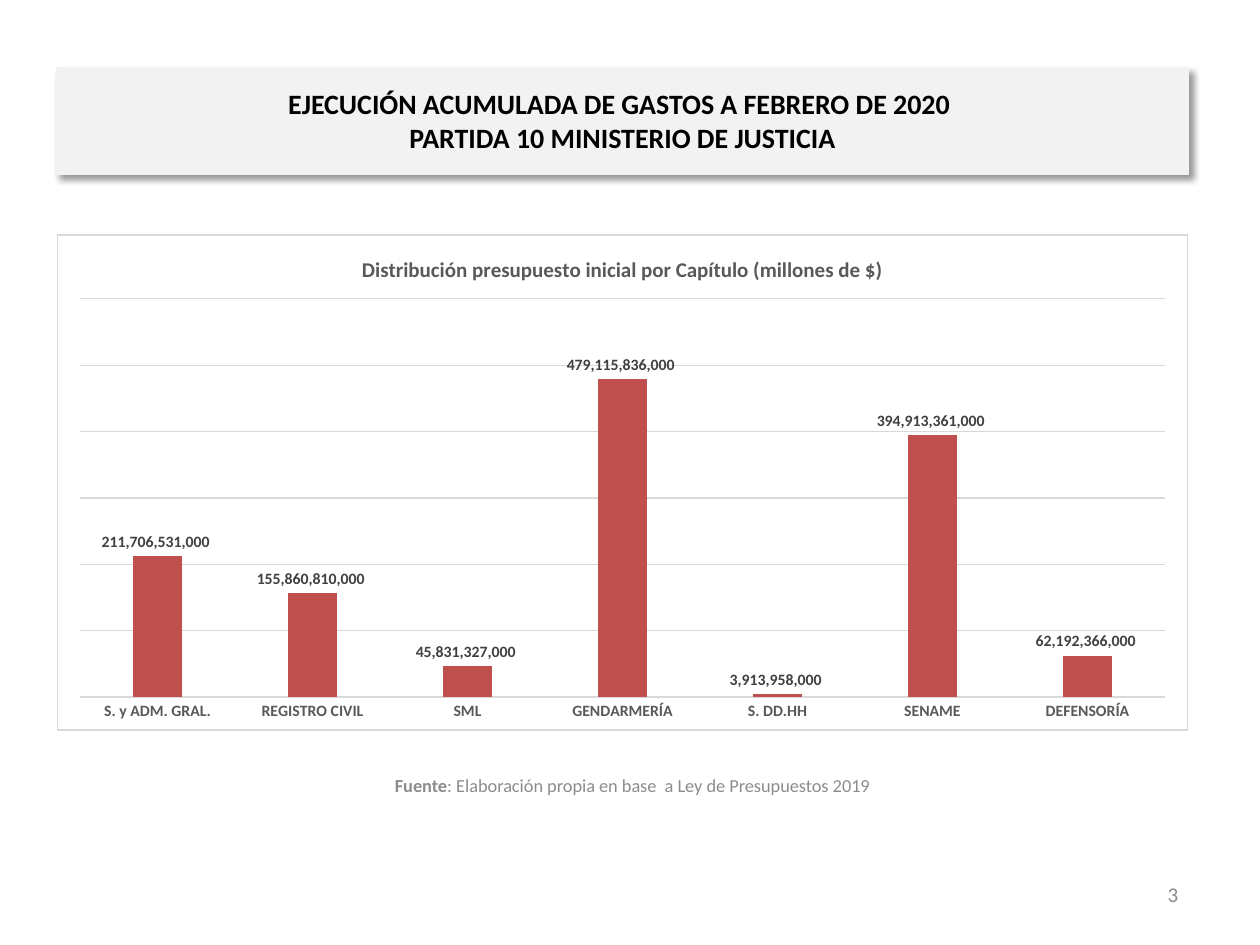
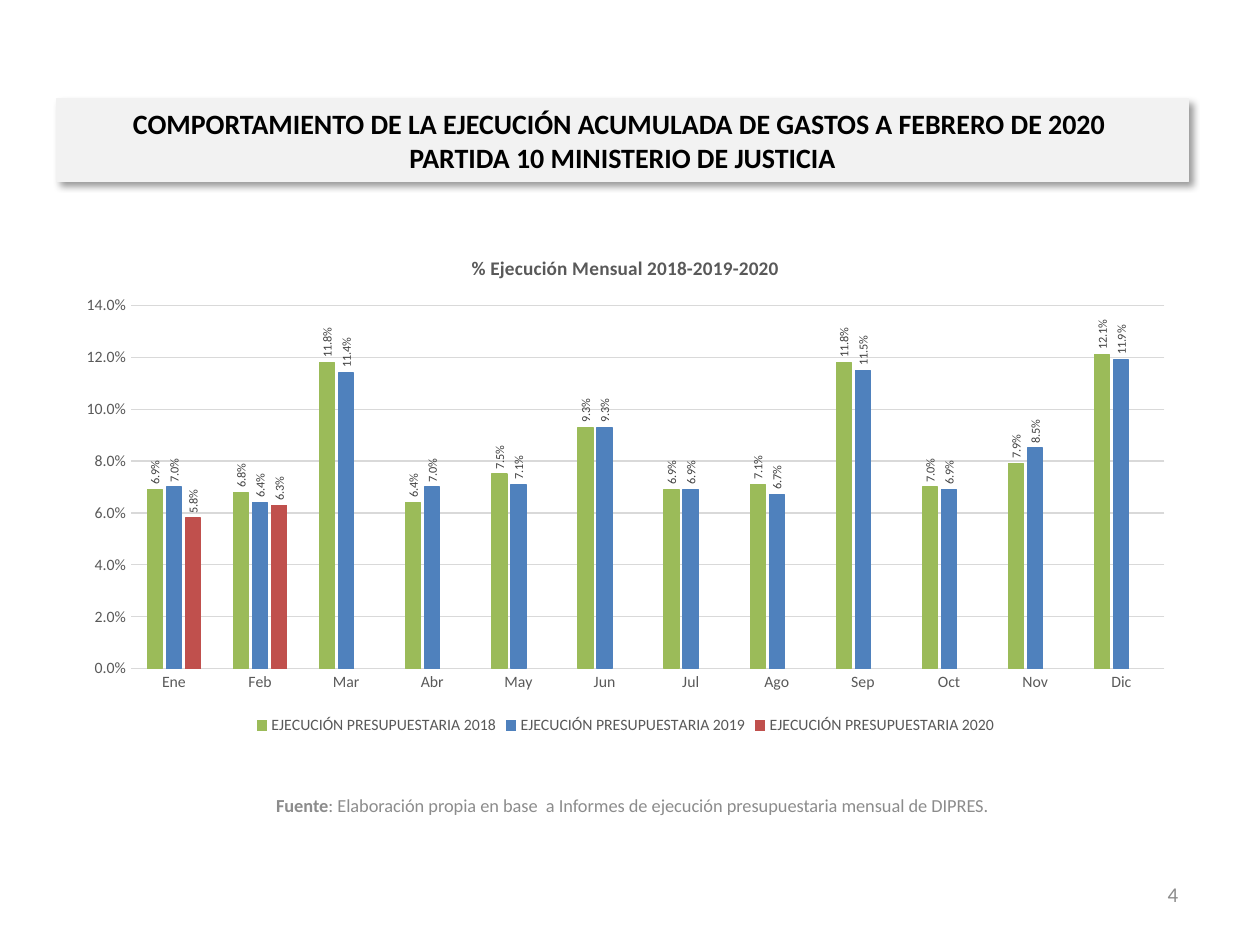
import pptx
import pptx.chart.data
import pptx.dml.color
import pptx.enum.chart
import pptx.enum.shapes
import pptx.enum.text
import pptx.oxml.ns
import pptx.util
from dataclasses import dataclass
from lxml import etree

Pt = pptx.util.Pt
qn = pptx.oxml.ns.qn
Align = pptx.enum.text.PP_ALIGN
Enum = pptx.enum.chart


# Shared colours and type sizes
@dataclass(frozen=True)
class Theme:
    font: str = "Calibri"
    black: str = "000000"
    white: str = "FFFFFF"
    band: str = "F2F2F2"
    note: str = "8C8C8C"
    dark: str = "595959"
    label: str = "404040"
    grid: str = "D9D9D9"
    red: str = "C0504D"
    blue: str = "4F81BD"
    green: str = "9BBB59"
    head: float = 16
    page: float = 12
    source: float = 10.5
    base: float = 10
    axis: float = 9
    line: float = 0.75


def color(code):
    return pptx.dml.color.RGBColor.from_string(code)


class Deck:
    def __init__(self, theme):
        self.theme = theme
        self.file = pptx.Presentation()
        self.file.slide_width, self.file.slide_height = Pt(720), Pt(540)
        self.slide = None

    def font(self, font, size, code, bold=False):
        font.name, font.size, font.bold = self.theme.font, Pt(size), bold
        font.color.rgb = color(code)

    def stroke(self, line, code):
        line.color.rgb = color(code)
        line.width = Pt(self.theme.line)

    def run(self, para, text, size, code, bold=False):
        run = para.add_run()
        run.text = text
        self.font(run.font, size, code, bold)

    def start(self, page):
        self.slide = self.file.slides.add_slide(self.file.slide_layouts[6])
        para = self.text(512.6, 496.8, 167.8, Align.RIGHT)
        self.run(para, str(page), self.theme.page, self.theme.note)

    def text(self, left, top, width, align):
        box = self.slide.shapes.add_textbox(Pt(left), Pt(top), Pt(width), Pt(28.8))
        frame = box.text_frame
        frame.word_wrap = True
        frame.vertical_anchor = pptx.enum.text.MSO_ANCHOR.MIDDLE
        frame.paragraphs[0].alignment = align
        return frame.paragraphs[0]

    def source(self, top, text):
        para = self.text(30.6, top, 661.7, Align.CENTER)
        self.run(para, "Fuente", self.theme.source, self.theme.note, True)
        self.run(para, ": " + text, self.theme.source, self.theme.note)

    def banner(self, top, height, first):
        look = self.theme
        band = self.slide.shapes.add_shape(
            pptx.enum.shapes.MSO_SHAPE.RECTANGLE,
            Pt(32.4), Pt(top), Pt(646.6), Pt(height))
        band.fill.solid()
        band.fill.fore_color.rgb = color(look.band)
        self.stroke(band.line, look.band)
        band.shadow.inherit = False
        # Soft shadow to the lower right
        cast = etree.SubElement(
            band.element.spPr.find(qn("a:effectLst")), qn("a:outerShdw"),
            blurRad=str(Pt(4)), dist=str(Pt(3)), dir=str(45 * 60000),
            algn="tl", rotWithShape="0")
        tint = etree.SubElement(cast, qn("a:srgbClr"), val=look.black)
        etree.SubElement(tint, qn("a:alpha"), val="40000")
        frame = band.text_frame
        frame.word_wrap = True
        frame.vertical_anchor = pptx.enum.text.MSO_ANCHOR.MIDDLE
        para = frame.paragraphs[0]
        para.alignment = Align.CENTER
        self.run(para, first + " ", look.head, look.black, True)
        para.add_line_break()
        self.run(para, "PARTIDA 10 MINISTERIO DE JUSTICIA",
                 look.head, look.black, True)

    def chart(self, area, title, size, names, rows, form, top, step, bold=False):
        """Draw columns; rows holds (name, values, colour)."""
        look = self.theme
        data = pptx.chart.data.CategoryChartData(number_format=form)
        data.categories = names
        for name, vals, _ in rows:
            data.add_series(name, vals)
        chart = self.slide.shapes.add_chart(
            Enum.XL_CHART_TYPE.COLUMN_CLUSTERED, *map(Pt, area), data).chart
        self.font(chart.font, look.base, look.black)
        chart.has_legend = False
        chart.has_title = True
        self.run(chart.chart_title.text_frame.paragraphs[0],
                 title, size, look.dark, True)
        chart.chart_title.include_in_layout = False

        # Axes
        for axis in (chart.category_axis, chart.value_axis):
            axis.major_tick_mark = Enum.XL_TICK_MARK.NONE
            axis.minor_tick_mark = Enum.XL_TICK_MARK.NONE
            self.font(axis.tick_labels.font, look.axis, look.dark, bold)
        self.stroke(chart.category_axis.format.line, look.grid)
        scale = chart.value_axis
        scale.minimum_scale, scale.maximum_scale = 0, top
        scale.major_unit = step
        scale.format.line.fill.background()
        scale.tick_labels.number_format = form
        scale.tick_labels.number_format_is_linked = False
        scale.has_major_gridlines = True
        self.stroke(scale.major_gridlines.format.line, look.grid)

        # Columns
        plot = chart.plots[0]
        plot.gap_width, plot.overlap = 219, -27
        plot.vary_by_categories = False
        for item, row in zip(plot.series, rows):
            item.invert_if_negative = False
            item.format.fill.solid()
            item.format.fill.fore_color.rgb = color(row[2])
        return chart

    def labels(self, chart, size, form, bold=False, turn=0):
        for item in chart.plots[0].series:
            marks = item.data_labels
            marks.show_value = True
            marks.position = Enum.XL_LABEL_POSITION.OUTSIDE_END
            marks.number_format = form
            marks.number_format_is_linked = False
            self.font(marks.font, size, self.theme.label, bold)
        if turn:
            for node in chart.element.iter(qn("c:dLbls")):
                body = node.find(qn("c:txPr")).find(qn("a:bodyPr"))
                body.set("rot", str(turn * 60000))
                body.set("vert", "horz")

    def legend(self, chart):
        chart.has_legend = True
        chart.legend.position = Enum.XL_LEGEND_POSITION.BOTTOM
        chart.legend.include_in_layout = False
        self.font(chart.legend.font, self.theme.axis, self.theme.dark)

    def frame(self, chart):
        look = self.theme
        props = etree.Element(qn("c:spPr"))
        line = etree.Element(qn("a:ln"), w=str(Pt(look.line)))
        for home, code in ((props, look.white), (line, look.grid)):
            fill = etree.SubElement(home, qn("a:solidFill"))
            etree.SubElement(fill, qn("a:srgbClr"), val=code)
        props.append(line)
        chart.element.find(qn("c:chart")).addnext(props)


def budget(deck):
    look = deck.theme
    deck.start(3)
    deck.banner(38.4, 61, "EJECUCIÓN ACUMULADA DE GASTOS A FEBRERO DE 2020")
    deck.source(434.2, "Elaboración propia en base  a Ley de Presupuestos 2019")
    names = ["S. y ADM. GRAL.", "REGISTRO CIVIL", "SML", "GENDARMERÍA",
             "S. DD.HH", "SENAME", "DEFENSORÍA"]
    vals = [211706531000, 155860810000, 45831327000, 479115836000,
            3913958000, 394913361000, 62192366000]
    form = "#,##0_ ;[Red]\\-#,##0\\ "
    chart = deck.chart(
        (32.4, 133.9, 646.6, 283.7),
        "Distribución presupuesto inicial por Capítulo (millones de $)", 12,
        names, [("Series 1", vals, look.red)], form, 600e9, 100e9, bold=True)
    chart.value_axis.visible = False
    deck.labels(chart, look.axis, form, bold=True)
    deck.frame(chart)


def monthly(deck):
    look = deck.theme
    deck.start(4)
    deck.banner(56.6, 47.2,
                "COMPORTAMIENTO DE LA EJECUCIÓN ACUMULADA DE GASTOS A FEBRERO DE 2020")
    deck.source(445.7, "Elaboración propia en base  a Informes de ejecución "
                       "presupuestaria mensual de DIPRES.")
    names = "Ene Feb Mar Abr May Jun Jul Ago Sep Oct Nov Dic".split()
    years = [
        (2018, look.green, [0.069, 0.068, 0.118, 0.064, 0.075, 0.093,
                            0.069, 0.071, 0.118, 0.07, 0.079, 0.121]),
        (2019, look.blue, [0.07, 0.064, 0.114, 0.07, 0.071, 0.093,
                           0.069, 0.067, 0.115, 0.069, 0.085, 0.119]),
        (2020, look.red, [0.058, 0.063] + [None] * 10),
    ]
    rows = [(f"EJECUCIÓN PRESUPUESTARIA {year}", vals, code)
            for year, code, vals in years]
    chart = deck.chart((36.7, 133.9, 641.5, 288.7),
                       "% Ejecución Mensual 2018-2019-2020", 11,
                       names, rows, "0.0%", 0.14, 0.02)
    for item, row in zip(chart.plots[0].series, rows):
        deck.stroke(item.format.line, row[2])
    deck.labels(chart, 7, "0.0%", turn=-90)
    deck.legend(chart)


def main():
    deck = Deck(Theme())
    budget(deck)
    monthly(deck)
    deck.file.save("out.pptx")


if __name__ == "__main__":
    main()
